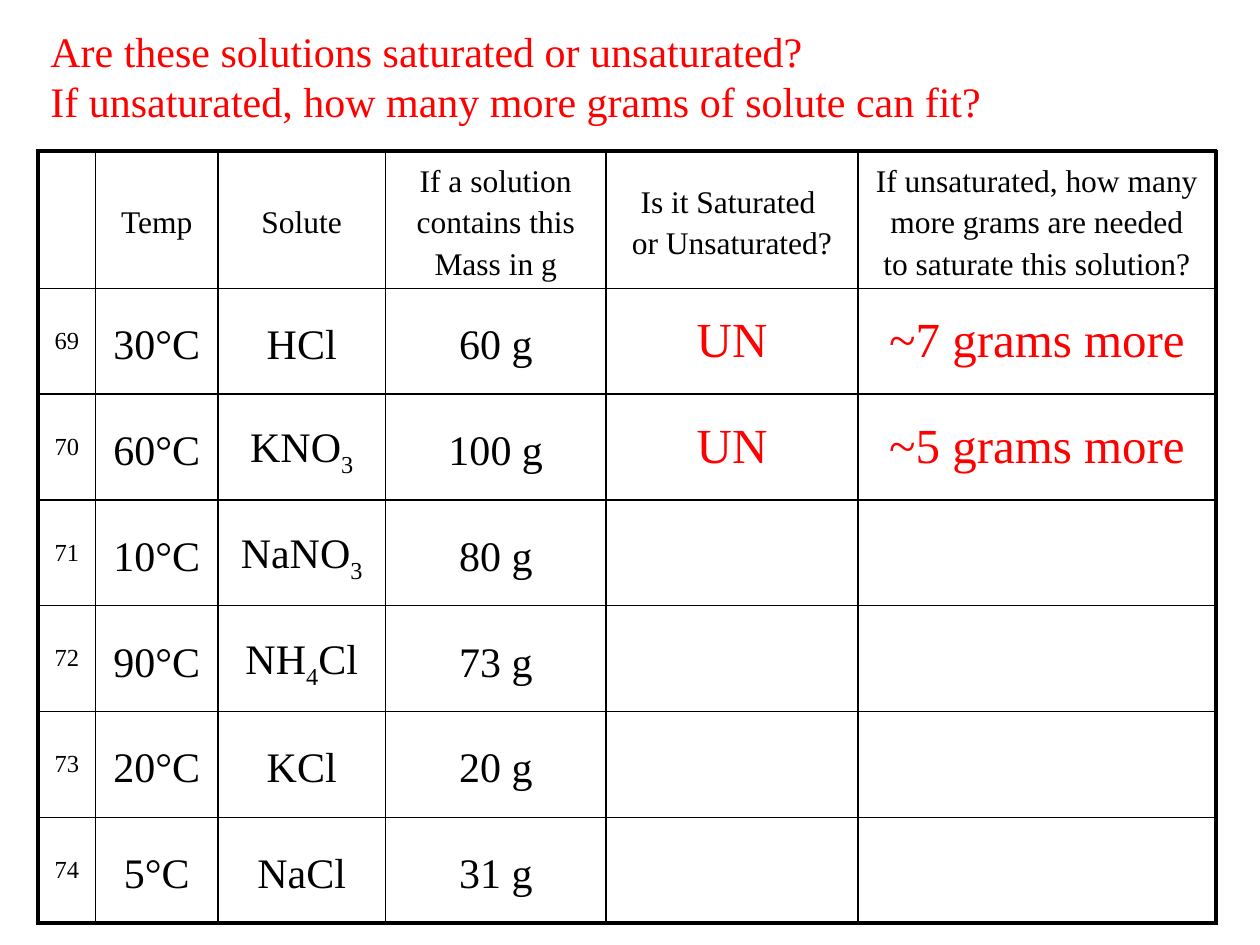
"""Build a worksheet slide on saturated and unsaturated solutions."""
import pptx
import pptx.dml.color
import pptx.enum.text
import pptx.oxml.ns
import pptx.util
import lxml.etree

COLORS = {"ink": "000000", "answer": "FF0000"}
FONT = "Times New Roman"
CENTER = pptx.enum.text.PP_ALIGN.CENTER
LEFT = pptx.enum.text.PP_ALIGN.LEFT
MIDDLE = pptx.enum.text.MSO_ANCHOR.MIDDLE

HEADINGS = [
    "",
    "Temp",
    "Solute",
    "If a solution contains this Mass in g",
    "Is it Saturated \nor Unsaturated?",
    "If unsaturated, how many more grams are needed\nto saturate this solution?",
]
FIRST_NUMBER = 69
QUESTIONS = [
    ("30°C", "HCl", "60 g", "UN", "~7 grams more"),
    ("60°C", "KNO|3|", "100 g", "UN", "~5 grams more"),
    ("10°C", "NaNO|3|", "80 g", "", ""),
    ("90°C", "NH|4|Cl", "73 g", "", ""),
    ("20°C", "KCl", "20 g", "", ""),
    ("5°C", "NaCl", "31 g", "", ""),
]
COLUMN_WIDTHS = [0.46, 0.97, 1.33, 1.75, 2, 2.84]
ROW_HEIGHTS = [0.92] + [0.84] * len(QUESTIONS)

LABEL = {"size": 14, "before": 2.8}
HEADING = {"size": 18, "before": 4.8, "after": 6, "spacing": 1.19}
GIVEN = {**HEADING, "size": 24}
ANSWER = {"size": 28, "before": 5.6, "color": "answer"}
COLUMN_STYLES = [LABEL, GIVEN, GIVEN, GIVEN, ANSWER, ANSWER]


def write(frame, text, size=18, color="ink", align=CENTER, before=0, after=0, spacing=1.0):
    """Fill a text frame; bars enclose subscripts and newlines break lines."""
    para = frame.paragraphs[0]
    para.alignment = align
    para.space_before = pptx.util.Pt(before)
    para.space_after = pptx.util.Pt(after)
    para.line_spacing = spacing
    for index, line in enumerate(text.split("\n")):
        if index:
            para.add_line_break()
        for order, part in enumerate(line.split("|")):
            if not part:
                continue
            span = para.add_run()
            span.text = part
            span.font.name = FONT
            span.font.size = pptx.util.Pt(size)
            span.font.color.rgb = pptx.dml.color.RGBColor.from_string(COLORS[color])
            if order % 2:
                span.font._element.set("baseline", "-25000")


class Worksheet:
    """Holds the deck, its current page and the border style."""

    thin, thick = 1, 2.25

    def __init__(self, width, height):
        """Start a deck with one title-only page."""
        self.deck = pptx.Presentation()
        self.deck.slide_width = pptx.util.Inches(width)
        self.deck.slide_height = pptx.util.Inches(height)
        self.page = self.deck.slides.add_slide(self.deck.slide_layouts[5])

    def place(self, left, top, width, height):
        """Turn shares of the slide's size into lengths."""
        across, down = self.deck.slide_width, self.deck.slide_height
        return [round(share * side) for share, side in
                zip((left, top, width, height), (across, down, across, down))]

    def title(self, text, area, **style):
        """Move and format the title placeholder."""
        box = self.page.shapes.title
        box.left, box.top, box.width, box.height = self.place(*area)
        box.text_frame.vertical_anchor = pptx.enum.text.MSO_ANCHOR.TOP
        box.text_frame.word_wrap = True
        write(box.text_frame, text, **style)

    def table(self, rows, area, widths, heights):
        """Add a ruled table with a thick outer frame."""
        frame = self.page.shapes.add_table(len(rows), len(widths), *self.place(*area))
        grid = frame.table
        grid.first_row = grid.horz_banding = False
        for column, width in zip(grid.columns, widths):
            column.width = pptx.util.Inches(width)
        for row, height in zip(grid.rows, heights):
            row.height = pptx.util.Inches(height)
        for down, texts in enumerate(rows):
            for across, text in enumerate(texts):
                cell = grid.cell(down, across)
                cell.fill.background()
                cell.vertical_anchor = MIDDLE
                edges = {"L": across == 0, "R": across == len(widths) - 1,
                         "T": down == 0, "B": down == len(rows) - 1}
                self.borders(cell, edges)
                style = COLUMN_STYLES[across] if down else HEADING
                write(cell.text_frame, text, **style)

    def borders(self, cell, edges):
        """Rule each side of a cell, thick where it is an outer edge."""
        properties = cell._tc.get_or_add_tcPr()
        name = pptx.oxml.ns.qn
        for order, (side, outer) in enumerate(edges.items()):
            line = lxml.etree.Element(name("a:ln" + side))
            line.set("w", str(pptx.util.Pt(self.thick if outer else self.thin)))
            fill = lxml.etree.SubElement(line, name("a:solidFill"))
            lxml.etree.SubElement(fill, name("a:srgbClr")).set("val", COLORS["ink"])
            properties.insert(order, line)

    def save(self):
        """Write the deck to its file."""
        self.deck.save("out.pptx")


def main():
    """Build the slide."""
    sheet = Worksheet(10, 7.5)
    sheet.title(
        "Are these solutions saturated or unsaturated?\n"
        "If unsaturated, how many more grams of solute can fit?",
        (0.03, 0.02, 0.95, 0.17), size=24, color="answer", align=LEFT, before=12)
    rows = [HEADINGS] + [(str(number), *question)
                         for number, question in enumerate(QUESTIONS, FIRST_NUMBER)]
    sheet.table(rows, (0.03, 0.16, 0.93, 0.82), COLUMN_WIDTHS, ROW_HEIGHTS)
    sheet.save()


if __name__ == "__main__":
    main()
